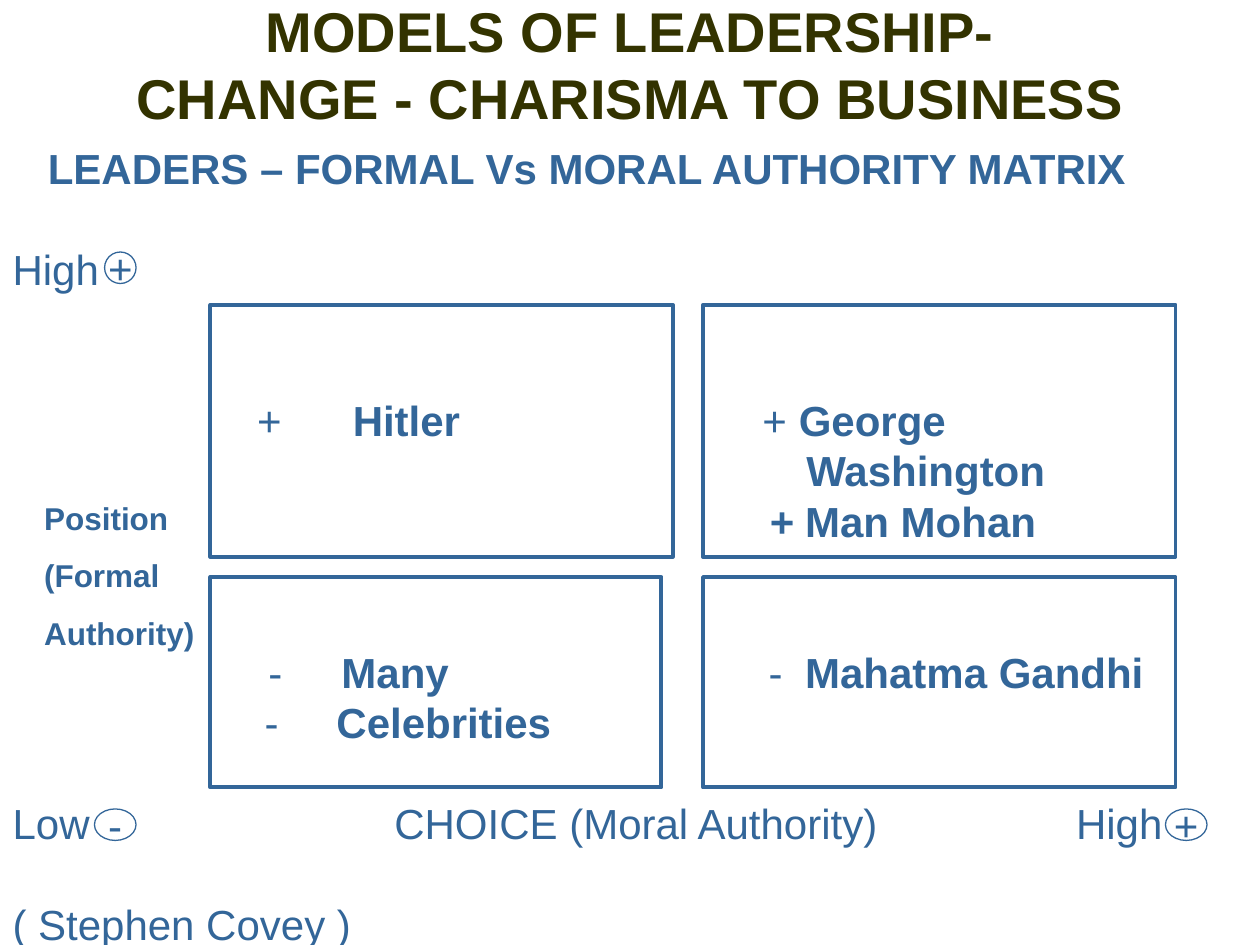
from typing import NamedTuple

from lxml import etree
from pptx import Presentation
from pptx.dml.color import RGBColor
from pptx.enum.shapes import MSO_SHAPE
from pptx.enum.text import MSO_ANCHOR, PP_ALIGN
from pptx.oxml.ns import qn
from pptx.util import Inches, Pt

OVAL, RECTANGLE = MSO_SHAPE.OVAL, MSO_SHAPE.RECTANGLE
LEFT, CENTER = PP_ALIGN.LEFT, PP_ALIGN.CENTER
TOP, MIDDLE = MSO_ANCHOR.TOP, MSO_ANCHOR.MIDDLE
BLUE, OLIVE, WHITE = "336699", "333300", "FFFFFF"
FONT = "Arial"
BODY_SIZE = 24
LINE_FACTOR = 1.2
FIRST_ROW, ROW_PITCH = 1.13, 0.4


class Area(NamedTuple):
    """Left, top, width and height in inches."""

    left: float
    top: float
    width: float
    height: float


class Label(NamedTuple):
    """A line of text placed on a row of the page."""

    text: str
    left: float
    row: int
    width: float
    bold: bool = False


class Sign(NamedTuple):
    """A circled sign at the end of an axis."""

    text: str
    area: Area


class Entry(NamedTuple):
    """A leader, with a mark hanging to the left of the name."""

    mark: str
    name: str
    mark_left: float
    name_left: float
    mark_bold: bool = False


class Quadrant(NamedTuple):
    """A cell of the matrix with the row its entries start on."""

    area: Area
    first_row: int
    entries: list[Entry]


TITLE = ["MODELS OF LEADERSHIP-", "CHANGE - CHARISMA TO BUSINESS"]
POSITION_AXIS = ["Position", "(Formal", "Authority)"]
LABELS = [
    Label("LEADERS – FORMAL Vs MORAL AUTHORITY MATRIX", 0.38, 0, 9.2, True),
    Label("High", 0.1, 2, 0.73),
    Label("Low", 0.1, 13, 0.65),
    Label("CHOICE (Moral Authority)", 3.13, 13, 4.2),
    Label("High", 8.54, 13, 0.71),
    Label("( Stephen Covey )", 0.1, 15, 3.2),
]
SIGNS = [
    Sign("+", Area(0.83, 2, 0.25, 0.25)),
    Sign("-", Area(0.75, 6.42, 0.33, 0.25)),
    Sign("+", Area(9.25, 6.42, 0.33, 0.25)),
]
QUADRANTS = [
    Quadrant(Area(1.67, 2.42, 3.67, 2), 5, [Entry("+", "Hitler", 2.04, 2.8)]),
    Quadrant(Area(5.58, 2.42, 3.75, 2), 5, [
        Entry("+", "George", 6.05, 6.34),
        Entry("", "Washington", 6.4, 6.4),
        Entry("+", "Man Mohan", 6.11, 6.39, True),
    ]),
    Quadrant(Area(1.67, 4.58, 3.58, 1.67), 10, [
        Entry("-", "Many", 2.13, 2.71),
        Entry("-", "Celebrities", 2.1, 2.67),
    ]),
    Quadrant(Area(5.58, 4.58, 3.75, 1.67), 10, [Entry("-", "Mahatma Gandhi", 6.1, 6.39)]),
]


def color(value: str) -> RGBColor:
    """Turn a hex string into a colour."""
    return RGBColor.from_string(value)


def row_top(row: int) -> float:
    """Give the top of a text row in inches."""
    return FIRST_ROW + row * ROW_PITCH


def apply_format(target, values: dict) -> None:
    """Set each named attribute on the target."""
    for name, value in values.items():
        setattr(target, name, value)


def prepare_frame(shape, anchor=TOP, top_inset: float = 0, wrap: bool = True):
    """Clear the insets of a shape's text frame and return the frame."""
    apply_format(shape.text_frame, {
        "word_wrap": wrap, "vertical_anchor": anchor,
        "margin_left": 0, "margin_right": 0,
        "margin_top": Inches(top_inset), "margin_bottom": 0,
    })
    return shape.text_frame


def add_span(para, text: str, size: float, bold: bool, hue: str = BLUE) -> None:
    """Add a formatted run to a paragraph."""
    span = para.add_run()
    span.text = text
    apply_format(span.font, {"name": FONT, "size": Pt(size), "bold": bold})
    span.font.color.rgb = color(hue)


def add_lines(frame, lines: list[str], size: float = BODY_SIZE, bold: bool = False,
              hue: str = BLUE, align=LEFT, gap: float = 0) -> None:
    """Fill a frame with one paragraph for each line."""
    for index, text in enumerate(lines):
        para = frame.add_paragraph() if index else frame.paragraphs[0]
        apply_format(para, {"alignment": align, "space_after": Pt(gap),
                            "line_spacing": Pt(size * LINE_FACTOR)})
        add_span(para, text, size, bold, hue)


def add_text(page, area: Area, lines: list[str], anchor=TOP, **style) -> None:
    """Add a text box holding the given lines."""
    box = page.shapes.add_textbox(*map(Inches, area))
    add_lines(prepare_frame(box, anchor), lines, **style)


def add_outline(page, kind, area: Area, weight: float):
    """Add a white shape with a blue outline."""
    shape = page.shapes.add_shape(kind, *map(Inches, area))
    shape.shadow.inherit = False
    shape.fill.solid()
    shape.fill.fore_color.rgb = color(WHITE)
    shape.line.color.rgb = color(BLUE)
    shape.line.width = Pt(weight)
    return shape


def add_sign(page, sign: Sign) -> None:
    """Add a circled sign."""
    shape = add_outline(page, OVAL, sign.area, 0.75)
    add_lines(prepare_frame(shape, MIDDLE, wrap=False), [sign.text], align=CENTER)


def add_entry(para, entry: Entry, origin: float) -> None:
    """Write a mark and a name with a hanging indent."""
    apply_format(para, {"alignment": LEFT, "line_spacing": Pt(BODY_SIZE * LINE_FACTOR)})
    properties = para._p.get_or_add_pPr()
    properties.set("marL", str(Inches(entry.name_left - origin)))
    properties.set("indent", str(Inches(entry.mark_left - entry.name_left)))
    if entry.mark:
        stops = etree.SubElement(properties, qn("a:tabLst"))
        etree.SubElement(stops, qn("a:tab"), pos=str(Inches(entry.name_left - origin)), algn="l")
        add_span(para, f"{entry.mark}\t", BODY_SIZE, entry.mark_bold)
    add_span(para, entry.name, BODY_SIZE, True)


def add_quadrant(page, quadrant: Quadrant) -> None:
    """Add a matrix cell with its leaders."""
    area = quadrant.area
    shape = add_outline(page, RECTANGLE, area, 2.25)
    frame = prepare_frame(shape, TOP, row_top(quadrant.first_row) - area.top)
    for index, entry in enumerate(quadrant.entries):
        para = frame.add_paragraph() if index else frame.paragraphs[0]
        add_entry(para, entry, area.left)


def main() -> None:
    """Build the leadership matrix and save it."""
    deck = Presentation()
    deck.slide_width, deck.slide_height = Inches(10), Inches(7.5)
    page = deck.slides.add_slide(deck.slide_layouts[6])
    for sign in SIGNS:
        add_sign(page, sign)
    for quadrant in QUADRANTS:
        add_quadrant(page, quadrant)
    add_text(page, Area(0, -0.08, 10, 1.17), TITLE, MIDDLE,
             size=32, bold=True, hue=OLIVE, align=CENTER)
    for label in LABELS:
        area = Area(label.left, row_top(label.row), label.width, ROW_PITCH)
        add_text(page, area, [label.text], bold=label.bold)
    add_text(page, Area(0.35, 3.96, 1.32, 1.26), POSITION_AXIS,
             size=18, bold=True, gap=11.2)
    deck.save("out.pptx")


if __name__ == "__main__":
    main()
